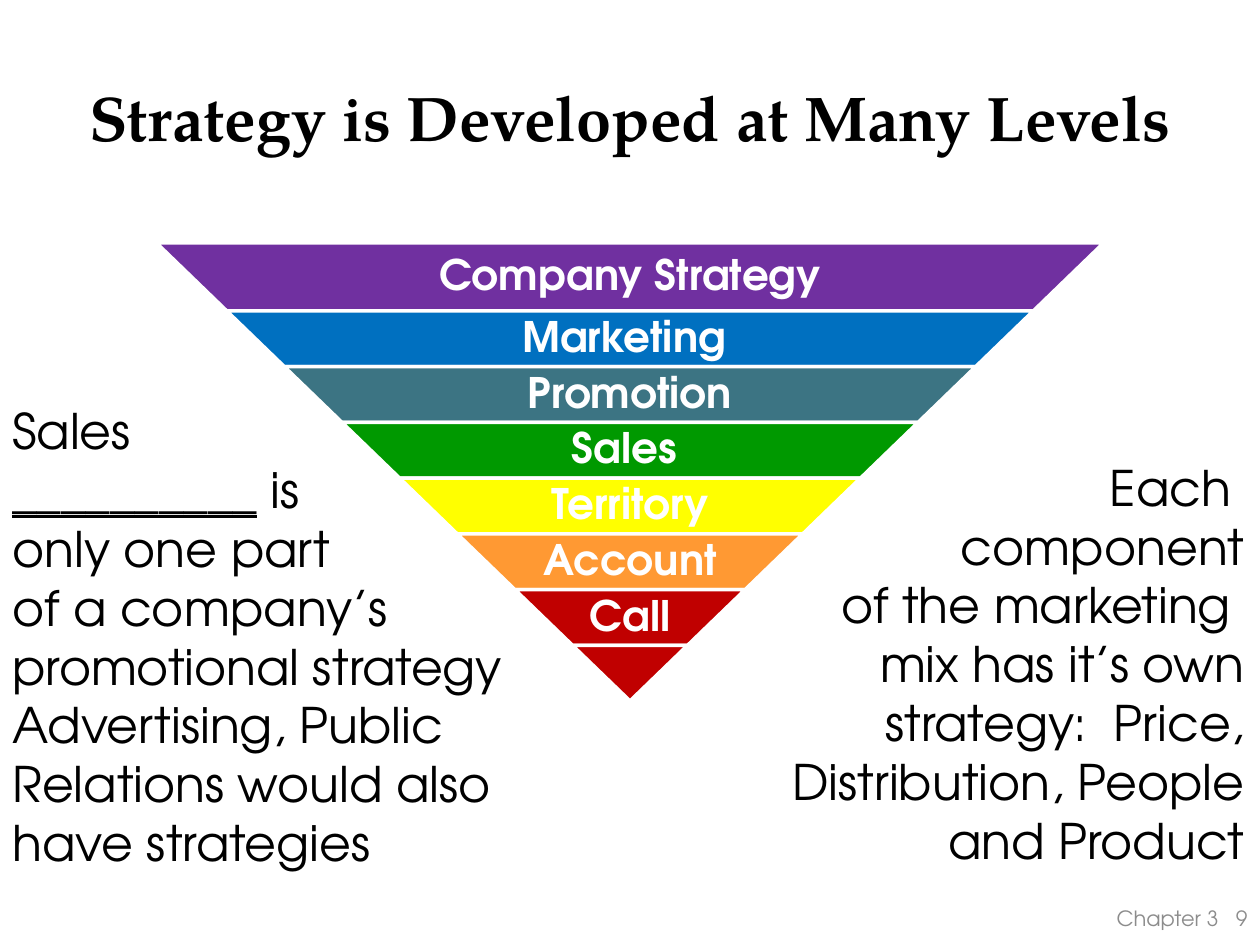
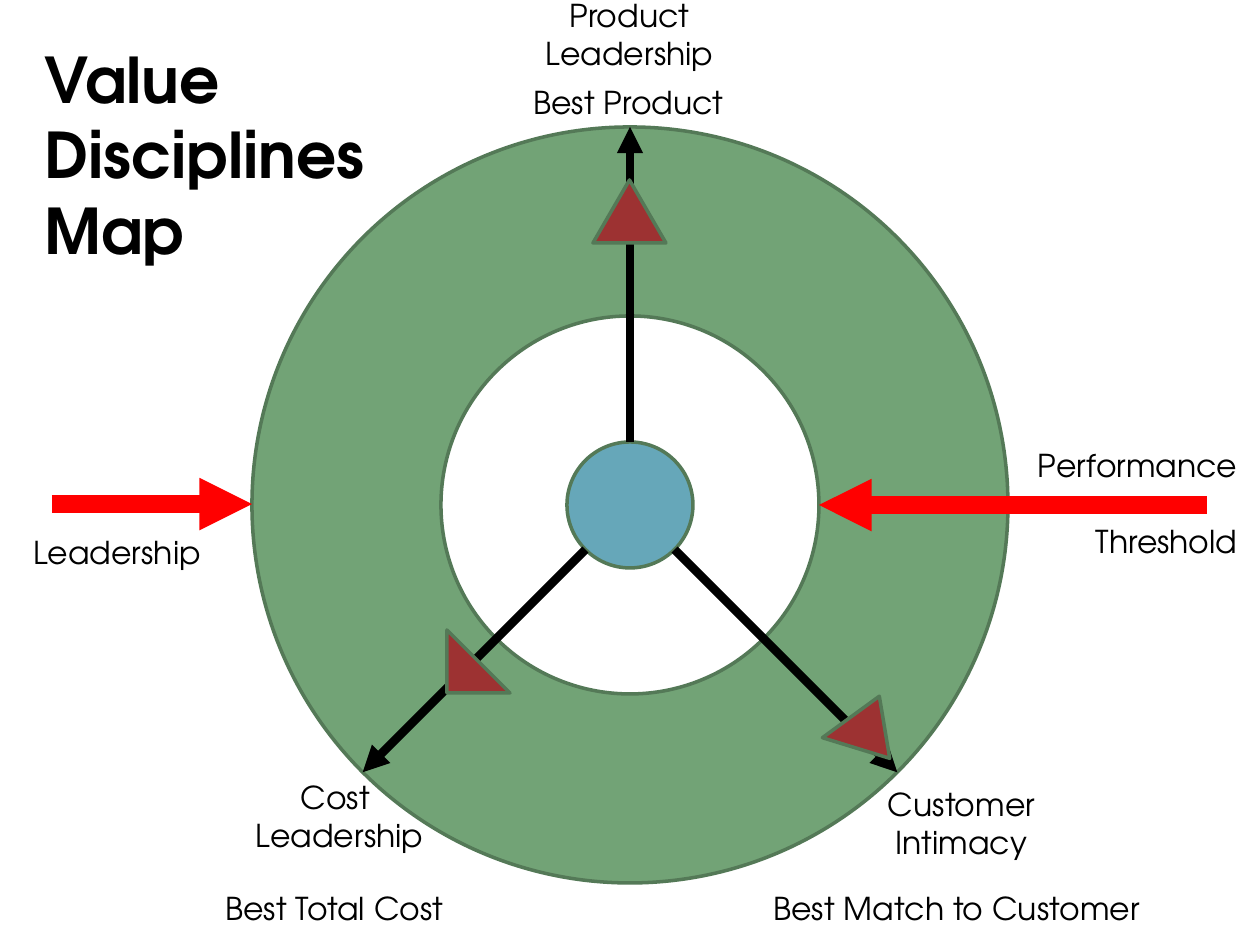
from math import cos, radians, sin

from lxml import etree
from pptx import Presentation
from pptx.dml.color import RGBColor
from pptx.enum.shapes import MSO_CONNECTOR, MSO_SHAPE
from pptx.enum.text import MSO_ANCHOR, MSO_AUTO_SIZE, PP_ALIGN
from pptx.oxml.ns import qn
from pptx.util import Emu, Pt

LEFT, CENTER, RIGHT = PP_ALIGN.LEFT, PP_ALIGN.CENTER, PP_ALIGN.RIGHT
TOP, MIDDLE = MSO_ANCHOR.TOP, MSO_ANCHOR.MIDDLE
STRAIGHT = MSO_CONNECTOR.STRAIGHT
TRAPEZOID, OVAL = MSO_SHAPE.TRAPEZOID, MSO_SHAPE.OVAL
TRIANGLE, RIGHT_TRIANGLE = MSO_SHAPE.ISOSCELES_TRIANGLE, MSO_SHAPE.RIGHT_TRIANGLE
EXTRACT = MSO_SHAPE.FLOWCHART_EXTRACT
TITLE_ONLY = 5

PX_PER_INCH = 126
EMU_PER_PX = 914400 / PX_PER_INCH
SLIDE_WIDTH, SLIDE_HEIGHT = 1260, 945

SANS, SERIF = "TeX Gyre Adventor", "TeX Gyre Pagella"
COLORS = {
    "black": "000000", "white": "FFFFFF", "gray": "8C8C8C",
    "purple": "7030A0", "blue": "0070C0", "teal": "3C7483",
    "green": "009900", "yellow": "FFFF00", "orange": "FF9933",
    "crimson": "C00000", "red": "FF0000", "ring": "72A376",
    "outline": "547957", "core": "66A7B9", "marker": "9D3232",
}
BODY = {"name": SANS, "size": Pt(28)}
LABEL = {"name": SANS, "size": Pt(18)}
BAND = {"name": SANS, "size": Pt(24), "bold": True}
FOOTER = {"name": SANS, "size": Pt(12)}
SERIF_TITLE = {"name": SERIF, "size": Pt(36), "bold": True}
SANS_TITLE = {"name": SANS, "size": Pt(36), "bold": True}


def px(length):
    return Emu(round(length * EMU_PER_PX))


def color(name):
    return RGBColor.from_string(COLORS[name])


def set_attributes(target, values):
    for name, value in values.items():
        setattr(target, name, value)


def fill_frame(frame, paragraphs, font, ink="black", align=LEFT, anchor=TOP,
               spacing=None, frame_format=None):
    """Each paragraph is a string or a list of (text, font values) runs."""
    set_attributes(frame, {"word_wrap": True, "auto_size": MSO_AUTO_SIZE.NONE,
                           "vertical_anchor": anchor, **(frame_format or {})})
    for index, content in enumerate(paragraphs):
        paragraph = frame.paragraphs[0] if index == 0 else frame.add_paragraph()
        set_attributes(paragraph, {"alignment": align, **(spacing or {})})
        if index == 0:
            paragraph.space_before = Pt(0)
        runs = [(content, {})] if isinstance(content, str) else content
        for text, extra in runs:
            run = paragraph.add_run()
            run.text = text
            set_attributes(run.font, {**font, **extra})
            run.font.color.rgb = color(ink)


def add_text(slide, box, paragraphs, font, **options):
    shape = slide.shapes.add_textbox(*map(px, box))
    fill_frame(shape.text_frame, paragraphs, font, **options)


def add_title(slide, box, text, font, **options):
    title = slide.shapes.title
    set_attributes(title, dict(zip(("left", "top", "width", "height"), map(px, box))))
    fill_frame(title.text_frame, [text], font, **options)


def add_figure(slide, kind, box, fill, line="outline", rotation=0):
    shape = slide.shapes.add_shape(kind, *map(px, box))
    shape.shadow.inherit = False
    shape.rotation = rotation
    shape.fill.solid()
    shape.fill.fore_color.rgb = color(fill)
    shape.line.color.rgb = color(line)
    shape.line.width = Pt(2)
    return shape


def add_arrow(slide, start, end, ink, width):
    arrow = slide.shapes.add_connector(STRAIGHT, *map(px, (*start, *end)))
    arrow.line.color.rgb = color(ink)
    arrow.line.width = Pt(width)
    etree.SubElement(arrow.line._get_or_add_ln(), qn("a:tailEnd"), type="triangle")
    etree.SubElement(arrow._element.spPr, qn("a:effectLst"))


def add_footer(slide, chapter, number):
    for box, text in (((1008, 892, 223, 53), chapter), ((1231, 892, 29, 53), number)):
        add_text(slide, box, [text], FOOTER, ink="gray", align=RIGHT,
                 anchor=MIDDLE, frame_format={"margin_left": 0})


def add_funnel(slide, bands, top, first_height, apex, slope):
    """Stack bands whose sides run straight down to the apex."""
    center = SLIDE_WIDTH / 2
    other_height = (apex - top - first_height) / (len(bands) - 1)
    margins = {f"margin_{side}": px(4) for side in ("left", "top", "right", "bottom")}
    for index, (text, fill) in enumerate(bands):
        height = other_height if index else first_height
        width = 2 * slope * (apex - top)
        band = add_figure(slide, TRAPEZOID, (center - width / 2, top, width, height),
                          fill, line="white", rotation=180)
        band.adjustments[0] = slope
        if text:
            label_width = 0.65 * width
            add_text(slide, (center - label_width / 2, top, label_width, height),
                     [text], BAND, ink="white", align=CENTER, anchor=MIDDLE,
                     spacing={"line_spacing": 0.9}, frame_format=margins)
        top += height


def build_strategy_levels(slide):
    add_footer(slide, "Chapter 3", "9")
    add_title(slide, (63, 38, 1134, 157), "Strategy is Developed at Many Levels",
              SERIF_TITLE, align=CENTER, anchor=MIDDLE)
    add_text(slide, (763, 451, 494, 473), [
        "Each ", "component", " of the marketing ",
        "mix has it’s own strategy:  Price, Distribution, People and Product",
    ], BODY, align=RIGHT)
    add_funnel(slide, [
        ("Company Strategy", "purple"), ("Marketing ", "blue"),
        ("Promotion", "teal"), ("Sales ", "green"), ("Territory", "yellow"),
        ("Account", "orange"), ("Call", "crimson"), ("", "crimson"),
    ], top=243, first_height=68, apex=701, slope=1.034)
    add_text(slide, (0, 368, 525, 536), [
        "Sales",
        [("__________", {"underline": True}), (" is", {})],
        "only one part",
        "of a company’s promotional strategy",
        "Advertising, Public Relations would also have strategies",
    ], BODY, anchor=MIDDLE)


def build_value_map(slide):
    # Concentric rings
    center_x, center_y = 630, 505
    core_radius, threshold_radius, outer_radius = 63, 189, 378
    for radius, fill in ((outer_radius, "ring"), (threshold_radius, "white"),
                         (core_radius, "core")):
        add_figure(slide, OVAL, (center_x - radius, center_y - radius,
                                 2 * radius, 2 * radius), fill)

    # One axis per discipline, from the core to the outer ring
    for angle in (-90, 45, 135):
        start, end = ((center_x + radius * cos(radians(angle)),
                       center_y + radius * sin(radians(angle)))
                      for radius in (core_radius, outer_radius))
        add_arrow(slide, start, end, "black", 5)

    # Position markers on the axes
    for kind, box, rotation in (
        (TRIANGLE, (593, 180, 73, 63), 0),
        (RIGHT_TRIANGLE, (447, 630, 63, 63), 0),
        (EXTRACT, (822, 701, 63, 63), 260.5),
    ):
        add_figure(slide, kind, box, "marker", rotation=rotation)

    # Discipline names and their promises
    for box, lines in (
        ((426, -10, 407, 89), ["Product", "Leadership"]),
        ((136, 772, 407, 89), ["Cost ", "Leadership"]),
        ((758, 779, 407, 89), ["Customer", "Intimacy"]),
        ((716, 883, 481, 50), ["Best Match to Customer"]),
        ((94, 883, 481, 50), ["Best Total Cost"]),
        ((388, 77, 481, 50), ["Best Product"]),
    ):
        add_text(slide, box, lines, LABEL, align=CENTER)

    # Leadership and threshold pointers
    add_text(slide, (21, 527, 199, 50), ["Leadership"], LABEL)
    add_arrow(slide, (52, 504), (center_x - outer_radius, 504), "red", 10)
    add_text(slide, (998, 440, 252, 127), ["Performance", "Threshold"], LABEL,
             align=RIGHT, spacing={"space_before": Pt(22)})
    add_arrow(slide, (1207, 505), (center_x + threshold_radius, 505), "red", 10)

    add_title(slide, (32, 34, 459, 242), "Value Disciplines Map", SANS_TITLE)


def main():
    presentation = Presentation()
    presentation.slide_width = px(SLIDE_WIDTH)
    presentation.slide_height = px(SLIDE_HEIGHT)
    for build in (build_strategy_levels, build_value_map):
        build(presentation.slides.add_slide(presentation.slide_layouts[TITLE_ONLY]))
    presentation.save("out.pptx")


if __name__ == "__main__":
    main()
